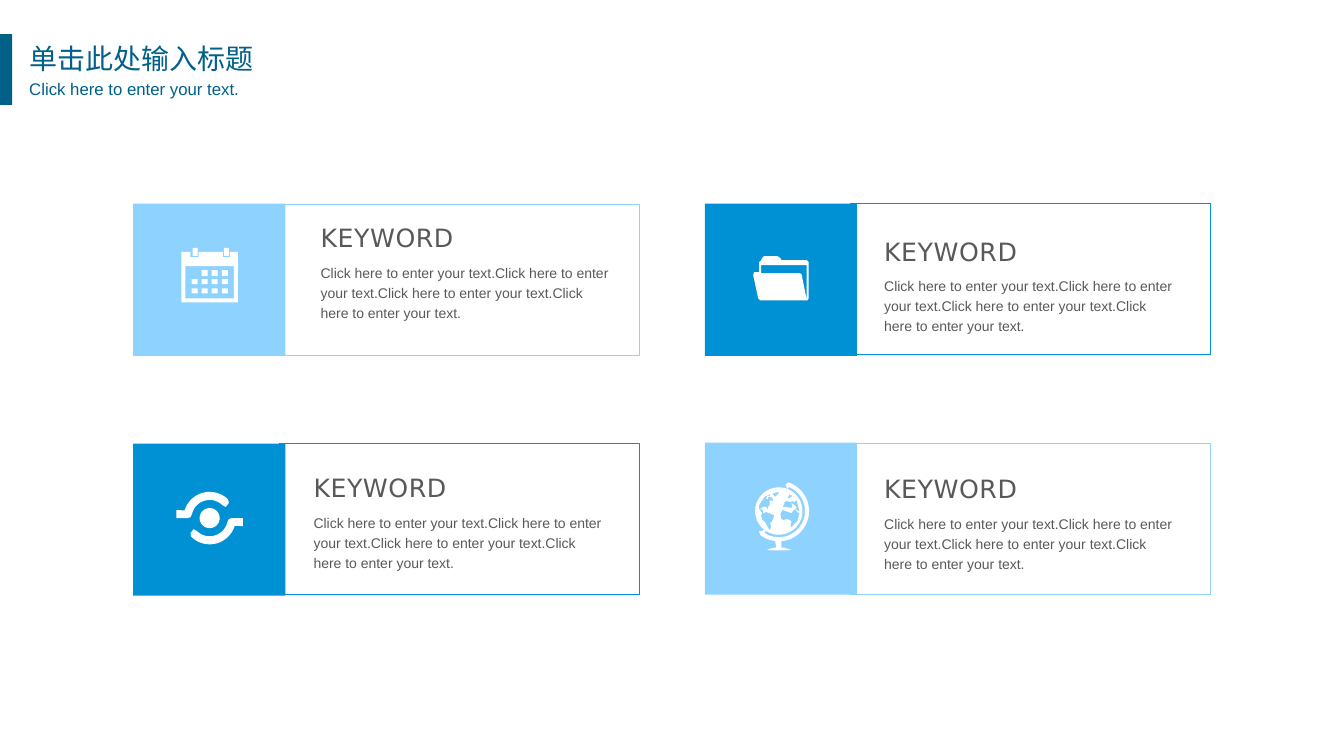
from dataclasses import dataclass
from math import cos, radians, sin

from lxml import etree
from pptx import Presentation
from pptx import util as u
from pptx.dml.color import RGBColor
from pptx.enum import shapes, text
from pptx.oxml import ns

Point = tuple[float, float]
Ring = list[Point]
Box = tuple[float, float, float, float]


@dataclass(frozen=True)
class Theme:
    navy: str = "006088"
    blue: str = "0091D4"
    sky: str = "8ED2FF"
    white: str = "FFFFFF"
    gray: str = "595959"
    latin: str = "Arial"
    wide: str = "DejaVu Sans"
    han: str = "Noto Sans CJK SC"
    title: int = 20
    head: int = 18
    sub: int = 12
    body: int = 10
    line: float = 0.25


@dataclass(frozen=True)
class Icon:
    rings: list[Ring]
    boxes: list[Box]


@dataclass(frozen=True)
class Card:
    tile: Point
    frame: Point
    head: Point
    color: str
    icon: Icon


@dataclass(frozen=True)
class Label:
    words: str
    box: Box
    size: int
    font: str
    color: str
    inset: bool = True
    loose: bool = False
    track: int = 0
    align: text.PP_ALIGN = text.PP_ALIGN.LEFT


THEME = Theme()
LINE = "Click here to enter your text."


def arc(mid: Point, size: float, start: float, end: float, steps: int = 24) -> Ring:
    turns = [radians(start + (end - start) * i / steps) for i in range(steps + 1)]
    return [(mid[0] + size * cos(a), mid[1] + size * sin(a)) for a in turns]


def rect(x: float, y: float, w: float, h: float) -> Ring:
    return [(x, y), (x + w, y), (x + w, y + h), (x, y + h)]


def calendar() -> Icon:
    page = [(2.36, 2.5), (2.28, 2.5), (2.28, 2.55), (2.21, 2.55), (2.21, 2.5),
            (1.97, 2.5), (1.97, 2.55), (1.89, 2.55), (1.89, 2.5), (1.8, 2.5),
            (1.8, 3), (2.36, 3)]
    # The first cell of the month is empty
    days = [(1.9 + 0.1 * col, 2.68 + 0.09 * row, 0.06, 0.06 if row == 0 else 0.05)
            for row in range(3) for col in range(4) if row or col]
    pins = [(x, 2.46, 0.05, 0.08) for x in (1.91, 2.22)]
    return Icon([page, rect(1.84, 2.64, 0.48, 0.32)], days + pins)


def folder() -> Icon:
    outer = [(8.02, 2.96), (8.02, 2.6), (8, 2.58), (7.75, 2.58), (7.74, 2.56),
             (7.71, 2.54), (7.58, 2.54), (7.56, 2.56), (7.55, 2.58), (7.53, 2.6),
             (7.53, 2.7), (7.48, 2.7), (7.47, 2.73), (7.52, 2.96), (7.54, 2.98),
             (8.01, 2.98)]
    gap = [(8, 2.73), (8, 2.97), (7.95, 2.72), (7.93, 2.71), (7.55, 2.71),
           (7.55, 2.63), (8, 2.63)]
    return Icon([outer, gap], [])


def swirl() -> Icon:
    mid = (2.08, 5.14)
    hook = [(1.75, 5.06), *arc(mid, 0.26, 197, 315), (2.27, 4.99), (2.24, 5.03),
            *arc(mid, 0.18, 313, 193), (1.89, 5.13), (1.86, 5.14), (1.75, 5.14)]
    twin = [(2 * mid[0] - x, 2 * mid[1] - y) for x, y in hook]
    return Icon([hook, twin, arc(mid, 0.1, 0, 360)], [])


def globe() -> Icon:
    mid = (7.725, 5.07)
    body = [*arc(mid, 0.3, -72, 85), (7.75, 5.43), (7.8, 5.44), (7.85, 5.455),
            (7.8, 5.46), (7.65, 5.46), (7.61, 5.455), (7.65, 5.44), (7.7, 5.43),
            *arc(mid, 0.3, 97, 128), (7.53, 5.27), (7.56, 5.27), (7.58, 5.25),
            *arc(mid, 0.235, 128, 292), (7.8, 4.83), (7.79, 4.81)]
    slot = arc(mid, 0.26, -67, 122) + arc(mid, 0.235, 124, -68)
    east = [(7.74, 5.1), (7.76, 5.06), (7.82, 5.08), (7.85, 5.09), (7.87, 5.06),
            (7.9, 5.05), (7.9, 5.03), (7.85, 4.99), (7.86, 5.02), (7.85, 5.04),
            (7.79, 5.03), (7.76, 5.03), (7.78, 5), (7.78, 4.98), (7.8, 4.97),
            (7.84, 4.98), (7.86, 4.97), (7.88, 4.98), (7.9, 4.96), (7.93, 5.07),
            (7.89, 5.06), (7.91, 5.08), (7.93, 5.09), (7.91, 5.17), (7.85, 5.23),
            (7.84, 5.21), (7.85, 5.17), (7.81, 5.15), (7.77, 5.16), (7.75, 5.15)]
    north = [(7.82, 4.9), (7.86, 4.92), (7.82, 4.95), (7.81, 4.93), (7.83, 4.92)]
    isle = [(7.68, 4.89), (7.73, 4.88), (7.72, 4.9), (7.7, 4.92), (7.69, 4.93),
            (7.66, 4.9)]
    west = [(7.56, 5.16), (7.55, 5.11), (7.56, 5.09), (7.53, 5.05), (7.53, 5.01),
            (7.58, 4.93), (7.64, 4.9), (7.64, 4.92), (7.61, 4.92), (7.6, 4.95),
            (7.62, 4.95), (7.62, 4.93), (7.65, 4.93), (7.67, 4.96), (7.66, 4.98),
            (7.65, 4.96), (7.63, 4.98), (7.64, 5), (7.62, 5.03), (7.62, 5.06),
            (7.6, 5.03), (7.57, 5.03), (7.54, 5.05), (7.57, 5.06), (7.57, 5.09),
            (7.6, 5.08), (7.68, 5.11), (7.66, 5.17), (7.64, 5.19), (7.65, 5.23),
            (7.63, 5.26), (7.61, 5.22), (7.58, 5.17)]
    return Icon([body, slot, east, north, isle, west], [])


def paint(item, fill: str | None, line: str | None = None) -> None:
    item.shadow.inherit = False
    if fill:
        item.fill.solid()
        item.fill.fore_color.rgb = RGBColor.from_string(fill)
    else:
        item.fill.background()
    if line:
        item.line.color.rgb = RGBColor.from_string(line)
        item.line.width = u.Pt(THEME.line)
    else:
        item.line.fill.background()


def block(host, box: Box, fill: str | None, line: str | None = None) -> None:
    kind = shapes.MSO_SHAPE.RECTANGLE
    paint(host.add_shape(kind, *(u.Inches(v) for v in box)), fill, line)


def trace(host, rings: list[Ring]) -> None:
    scaled = [[(u.Inches(x), u.Inches(y)) for x, y in ring] for ring in rings]
    pen = host.build_freeform(*scaled[0][0], scale=1.0)
    for i, ring in enumerate(scaled):
        if i:
            pen.move_to(*ring[0])
        pen.add_line_segments(ring[1:], close=True)
    paint(pen.convert_to_shape(), THEME.white)


def write(host, label: Label) -> None:
    frame = host.add_textbox(*(u.Inches(v) for v in label.box)).text_frame
    frame.word_wrap = True
    frame.auto_size = text.MSO_AUTO_SIZE.SHAPE_TO_FIT_TEXT
    if label.inset:
        frame.margin_left = frame.margin_right = u.Inches(0.04)
        frame.margin_top = frame.margin_bottom = u.Inches(0.04)
    para = frame.paragraphs[0]
    para.alignment = label.align
    if label.loose:
        para.line_spacing = 1.2
        para.space_before = u.Pt(label.size * 0.2)
    run = para.add_run()
    run.text = label.words
    run.font.size = u.Pt(label.size)
    run.font.name = label.font
    run.font.color.rgb = RGBColor.from_string(label.color)
    # East Asian face and letter spacing
    props = run._r.get_or_add_rPr()
    etree.SubElement(props, ns.qn("a:ea")).set("typeface", label.font)
    if label.track:
        props.set("spc", str(label.track))


def draw(host, card: Card) -> None:
    block(host, (*card.frame, 3.57, 1.49), None, card.color)
    group = host.add_group_shape().shapes
    block(group, (*card.tile, 1.51, 1.51), card.color)
    trace(group, card.icon.rings)
    for box in card.icon.boxes:
        block(group, box, THEME.white)
    x, y = card.head
    write(host, Label(LINE * 4, (x, y + 0.38, 2.97, 0.68), THEME.body,
                      THEME.latin, THEME.gray, loose=True))
    write(host, Label("KEYWORD", (x, y, 1.74, 0.39), THEME.head,
                      THEME.wide, THEME.gray, track=40))


def main() -> None:
    deck = Presentation()
    deck.slide_width, deck.slide_height = u.Inches(13.33), u.Inches(7.5)
    host = deck.slides.add_slide(deck.slide_layouts[6]).shapes

    # Four keyword cards
    for card in (
        Card((1.32, 2.02), (2.77, 2.03), (3.14, 2.17), THEME.sky, calendar()),
        Card((6.99, 2.02), (8.43, 2.02), (8.73, 2.3), THEME.blue, folder()),
        Card((1.32, 4.4), (2.77, 4.4), (3.07, 4.65), THEME.blue, swirl()),
        Card((6.99, 4.39), (8.43, 4.4), (8.73, 4.66), THEME.sky, globe()),
    ):
        draw(host, card)

    # Title with side bar
    write(host, Label("单击此处输入标题", (0.19, 0.36, 2.59, 0.46), THEME.title,
                      THEME.han, THEME.navy, inset=False))
    write(host, Label(LINE, (0.25, 0.7, 2.47, 0.32), THEME.sub, THEME.latin,
                      THEME.navy, loose=True, align=text.PP_ALIGN.JUSTIFY))
    block(host, (0, 0.34, 0.12, 0.7), THEME.navy)
    deck.save("out.pptx")


if __name__ == "__main__":
    main()
